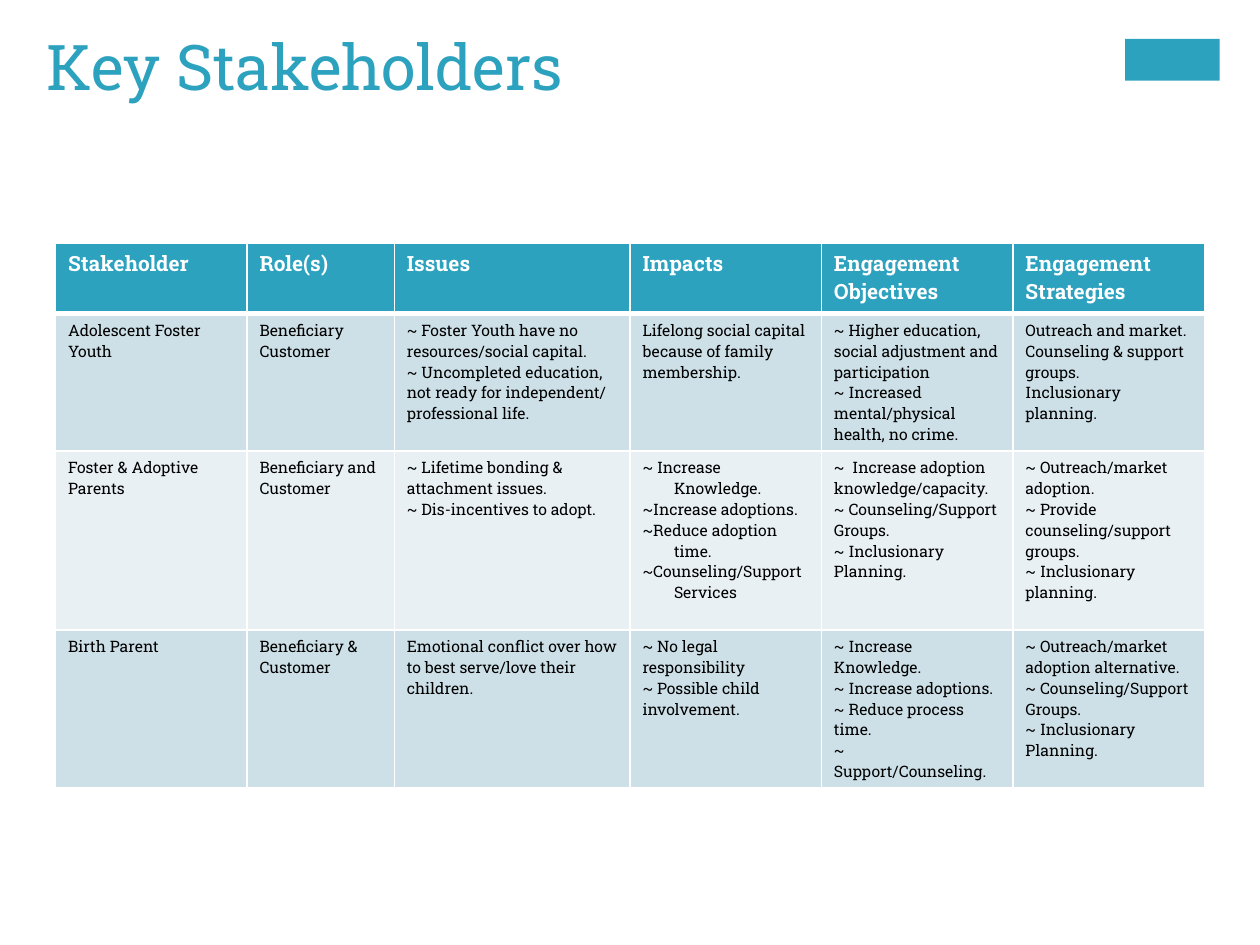
from dataclasses import dataclass
from typing import NamedTuple

from lxml.etree import SubElement
from pptx import Presentation
from pptx.dml.color import RGBColor
from pptx.enum.shapes import MSO_SHAPE
from pptx.enum.text import MSO_ANCHOR, PP_ALIGN
from pptx.oxml.ns import qn
from pptx.util import Inches, Pt


@dataclass(frozen=True)
class Theme:
    font: str = "Roboto Slab"
    accent: str = "2DA2BF"
    white: str = "FFFFFF"
    black: str = "000000"
    bands: tuple = ("CDE0E8", "E8F0F4")
    title_size: int = 36
    header_size: int = 12
    body_size: int = 9
    border: int = 1
    header_border: int = 3


class Entry(NamedTuple):
    lines: tuple
    align: PP_ALIGN = PP_ALIGN.LEFT
    hanging: float = 0


class Row(NamedTuple):
    height: float
    entries: tuple


THEME = Theme()
COLUMN_WIDTHS = (1.52, 1.17, 1.87, 1.52, 1.52, 1.52)
HEADER = Row(0.56, tuple(Entry((label,)) for label in (
    "Stakeholder", "Role(s)", "Issues", "Impacts",
    "Engagement Objectives", "Engagement Strategies")))
STAKEHOLDERS = (
    Row(1.09, (
        Entry(("Adolescent Foster Youth",)),
        Entry(("Beneficiary", "Customer"), align=PP_ALIGN.JUSTIFY),
        Entry(("~ Foster Youth have no resources/social capital.",
               "~ Uncompleted education, not ready for independent/ professional life.")),
        Entry(("Lifelong social capital because of family membership.",)),
        Entry(("~ Higher education, social adjustment and participation",
               "~ Increased mental/physical health, no crime.")),
        Entry(("Outreach and market.", "Counseling & support groups.",
               "Inclusionary planning.")),
    )),
    Row(1.42, (
        Entry(("Foster & Adoptive Parents",)),
        Entry(("Beneficiary and Customer",)),
        Entry(("~ Lifetime bonding & attachment issues.",
               "~ Dis-incentives to adopt.")),
        Entry(("~ Increase Knowledge.", "~Increase adoptions.",
               "~Reduce adoption time.", "~Counseling/Support Services"),
              hanging=0.25),
        Entry(("~  Increase adoption knowledge/capacity.",
               "~ Counseling/Support Groups.", "~ Inclusionary Planning.")),
        Entry(("~ Outreach/market adoption.",
               "~ Provide counseling/support groups.",
               "~ Inclusionary planning.")),
    )),
    Row(1.25, (
        Entry(("Birth Parent",)),
        Entry(("Beneficiary & Customer",)),
        Entry(("Emotional conflict over how to best serve/love their children.",)),
        Entry(("~ No legal responsibility", "~ Possible child involvement.")),
        Entry(("~ Increase Knowledge.", "~ Increase adoptions.",
               "~ Reduce process time.", "~ Support/Counseling.")),
        Entry(("~ Outreach/market", "adoption alternative.",
               "~ Counseling/Support Groups.", "~ Inclusionary Planning.")),
    )),
)


def write_text(tf, lines: tuple, *, size: int, color: str, bold: bool = False,
               align: PP_ALIGN = PP_ALIGN.LEFT, hanging: float = 0) -> None:
    tf.word_wrap = True
    for i, line in enumerate(lines):
        p = tf.paragraphs[0] if i == 0 else tf.add_paragraph()
        p.alignment = align
        if hanging:
            pPr = p._p.get_or_add_pPr()
            pPr.set("marL", str(Inches(hanging)))
            pPr.set("indent", str(-Inches(hanging)))
        r = p.add_run()
        r.text = line
        r.font.name = THEME.font
        r.font.size = Pt(size)
        r.font.bold = bold
        r.font.color.rgb = RGBColor.from_string(color)


def set_borders(cell, top: int, bottom: int) -> None:
    tcPr = cell._tc.get_or_add_tcPr()
    widths = {"a:lnL": THEME.border, "a:lnR": THEME.border,
              "a:lnT": top, "a:lnB": bottom}
    for tag, width in widths.items():
        ln = SubElement(tcPr, qn(tag), w=str(Pt(width)))
        fill = SubElement(ln, qn("a:solidFill"))
        SubElement(fill, qn("a:srgbClr"), val=THEME.white)


def add_accent(s) -> None:
    sp = s.shapes.add_shape(MSO_SHAPE.RECTANGLE, Inches(8.93), Inches(0.31),
                            Inches(0.75), Inches(0.33))
    sp.shadow.inherit = False
    sp.fill.solid()
    sp.fill.fore_color.rgb = RGBColor.from_string(THEME.accent)
    sp.line.fill.background()


def add_title(s, text: str) -> None:
    sp = s.shapes.add_textbox(Inches(0.27), Inches(0.17), Inches(8.26), Inches(1.22))
    sp.text_frame.vertical_anchor = MSO_ANCHOR.TOP
    write_text(sp.text_frame, (text,), size=THEME.title_size, color=THEME.accent)


def add_stakeholder_table(s) -> None:
    rows = (HEADER, *STAKEHOLDERS)
    table = s.shapes.add_table(
        len(rows), len(COLUMN_WIDTHS), Inches(0.44), Inches(1.93),
        Inches(sum(COLUMN_WIDTHS)), Inches(sum(row.height for row in rows))).table
    for column, width in zip(table.columns, COLUMN_WIDTHS):
        column.width = Inches(width)
    for i, row in enumerate(rows):
        is_header = i == 0
        table.rows[i].height = Inches(row.height)
        for j, entry in enumerate(row.entries):
            cell = table.cell(i, j)
            write_text(cell.text_frame, entry.lines, bold=is_header,
                       size=THEME.header_size if is_header else THEME.body_size,
                       color=THEME.white if is_header else THEME.black,
                       align=entry.align, hanging=entry.hanging)
            set_borders(cell,
                        top=THEME.header_border if i == 1 else THEME.border,
                        bottom=THEME.header_border if is_header else THEME.border)
            cell.fill.solid()
            cell.fill.fore_color.rgb = RGBColor.from_string(
                THEME.accent if is_header else THEME.bands[(i - 1) % 2])


def main() -> None:
    prs = Presentation()
    prs.slide_width, prs.slide_height = Inches(10), Inches(7.5)
    s = prs.slides.add_slide(prs.slide_layouts[6])
    add_accent(s)
    add_title(s, "Key Stakeholders")
    add_stakeholder_table(s)
    prs.save("out.pptx")


if __name__ == "__main__":
    main()
